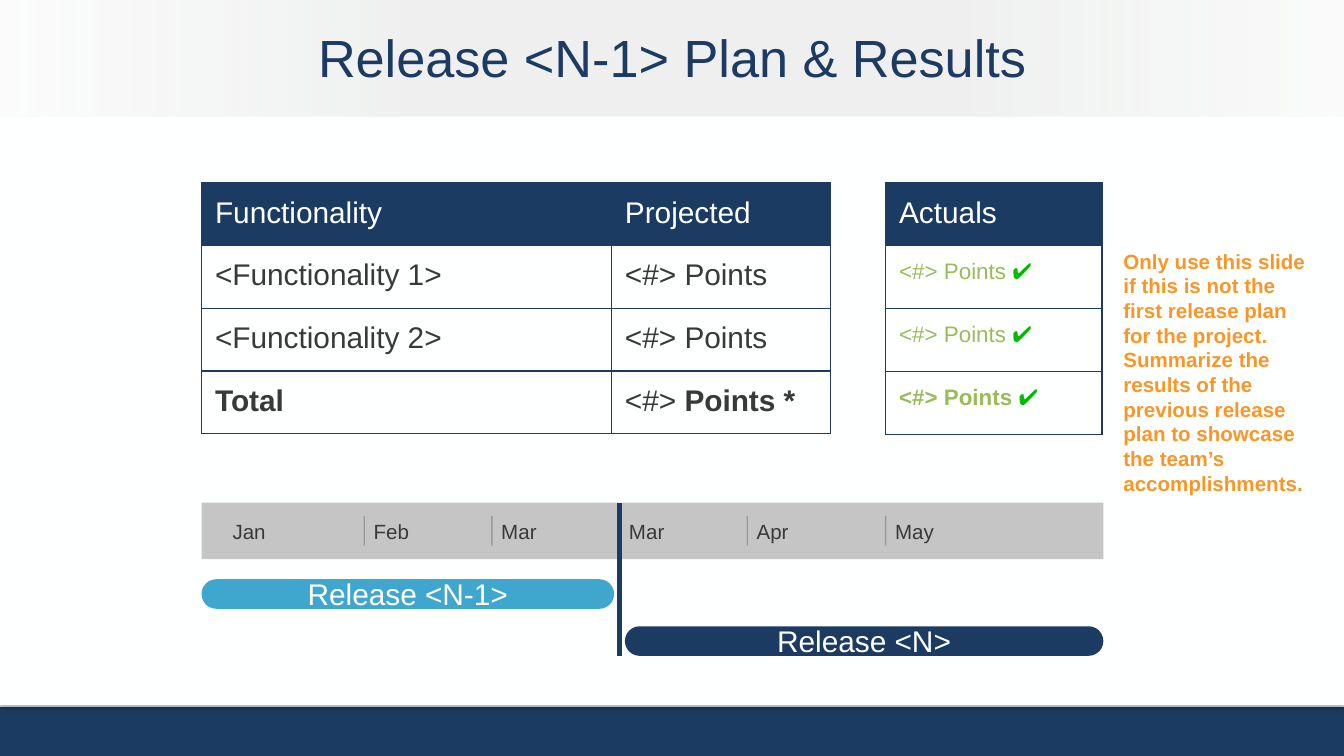
import pptx
import pptx.dml.color
import pptx.enum.shapes
import pptx.enum.text
import pptx.oxml
import pptx.oxml.ns
import pptx.util
from dataclasses import dataclass

Inches = pptx.util.Inches
Pt = pptx.util.Pt
qn = pptx.oxml.ns.qn
SHAPE = pptx.enum.shapes.MSO_SHAPE
ALIGN = pptx.enum.text.PP_ALIGN
ANCHOR = pptx.enum.text.MSO_ANCHOR
NAMESPACE = pptx.oxml.ns.nsdecls("a")


@dataclass(frozen=True)
class Theme:
    font: str = "Arial"
    navy: str = "1C3B63"
    paper: str = "FEFFFF"
    white: str = "FFFFFF"
    gray: str = "C4C5C4"
    text: str = "393939"
    sky: str = "3FA7CE"
    olive: str = "9BBB59"
    check: str = "00BB00"
    orange: str = "FD9526"
    title: float = 28
    body: float = 16
    actual: float = 12
    small: float = 11


def rgb(color):
    return pptx.dml.color.RGBColor.from_string(color)


def color_xml(color, alpha=100):
    return f'<a:srgbClr val="{color}"><a:alpha val="{alpha * 1000}"/></a:srgbClr>'


class SlideBuilder:
    def __init__(self, slide, theme):
        self.slide = slide
        self.theme = theme
        slide.background.fill.solid()
        slide.background.fill.fore_color.rgb = rgb(theme.paper)

    def style(self, font, size, color, bold=False):
        font.name = self.theme.font
        font.size = Pt(size)
        font.bold = bold
        font.color.rgb = rgb(color)

    def block(self, box, color, kind=SHAPE.RECTANGLE):
        shape = self.slide.shapes.add_shape(kind, *map(Inches, box))
        shape.shadow.inherit = False
        shape.fill.solid()
        shape.fill.fore_color.rgb = rgb(color)
        shape.line.fill.background()
        return shape

    def panel(self, box):
        """White page area that casts a soft shadow on the footer."""
        shape = self.block(box, self.theme.paper)
        shape.line.color.rgb = rgb(self.theme.paper)
        shape.line.width = Pt(0.75)
        effects = shape._element.spPr.find(qn("a:effectLst"))
        effects.append(pptx.oxml.parse_xml(
            f'<a:outerShdw {NAMESPACE} blurRad="{Pt(3.1)}" dist="{Pt(1.8)}" '
            f'dir="5400000" rotWithShape="0">{color_xml("000000", 35)}</a:outerShdw>'))

    def fading_band(self, box, color, stops):
        """Band whose opacity changes at each (position, alpha) stop."""
        shape = self.block(box, color)
        stop_xml = "".join(f'<a:gs pos="{position * 1000}">{color_xml(color, alpha)}</a:gs>'
                           for position, alpha in stops)
        solid = shape._element.spPr.find(qn("a:solidFill"))
        solid.getparent().replace(solid, pptx.oxml.parse_xml(
            f'<a:gradFill {NAMESPACE} rotWithShape="1"><a:gsLst>{stop_xml}</a:gsLst>'
            '<a:lin ang="10800000" scaled="0"/></a:gradFill>'))

    def text(self, box, text, size, color, margins=(0, 0), bold=False,
             anchor=ANCHOR.MIDDLE, align=ALIGN.LEFT):
        shape = self.slide.shapes.add_textbox(*map(Inches, box))
        self.fill_text(shape.text_frame, text, size, color, margins, bold, anchor, align)

    def fill_text(self, frame, text, size, color, margins, bold, anchor, align):
        frame.word_wrap = True
        frame.vertical_anchor = anchor
        frame.margin_left = frame.margin_right = Inches(margins[0])
        frame.margin_top = frame.margin_bottom = Inches(margins[1])
        paragraph = frame.paragraphs[0]
        paragraph.text = text
        paragraph.alignment = align
        self.style(paragraph.font, size, color, bold)

    def pill(self, box, text, color):
        shape = self.block(box, color, SHAPE.ROUNDED_RECTANGLE)
        shape.adjustments[0] = 0.5
        self.fill_text(shape.text_frame, text, self.theme.body, self.theme.white,
                       (0.1, 0.05), False, ANCHOR.MIDDLE, ALIGN.CENTER)

    def vertical_line(self, x, top, bottom, color, width, alpha=100):
        line = self.slide.shapes.add_connector(
            pptx.enum.shapes.MSO_CONNECTOR.STRAIGHT,
            Inches(x), Inches(top), Inches(x), Inches(bottom))
        line.line.color.rgb = rgb(color)
        line.line.width = Pt(width)
        properties = line._element.spPr
        if alpha < 100:
            value = properties.find(".//" + qn("a:srgbClr"))
            value.append(pptx.oxml.parse_xml(f'<a:alpha {NAMESPACE} val="{alpha * 1000}"/>'))
        properties.append(pptx.oxml.parse_xml(f"<a:effectLst {NAMESPACE}/>"))

    def table(self, box, widths, heights, rows, size):
        """Each cell is a list of (text, color, bold) runs; the first row is the header."""
        frame = self.slide.shapes.add_table(len(rows), len(widths), *map(Inches, box))
        table = frame.table
        table.first_row = table.horz_banding = False
        for column, width in zip(table.columns, widths):
            column.width = Inches(width)
        for row_index, (row, height) in enumerate(zip(rows, heights)):
            table.rows[row_index].height = Inches(height)
            for column_index, runs in enumerate(row):
                cell = table.cell(row_index, column_index)
                self.cell(cell, runs, self.theme.body if row_index == 0 else size)
                if row_index == 0:
                    cell.fill.solid()
                    cell.fill.fore_color.rgb = rgb(self.theme.navy)
                else:
                    cell.fill.background()
        frame.height = Inches(box[3])

    def cell(self, cell, runs, size):
        cell.margin_left = cell.margin_right = Inches(0.1)
        cell.margin_top = cell.margin_bottom = Inches(0.1)
        for side in "LRTB":
            cell._tc.get_or_add_tcPr().append(pptx.oxml.parse_xml(
                f'<a:ln{side} {NAMESPACE} w="{Pt(0.75)}"><a:solidFill>'
                f'{color_xml(self.theme.navy)}</a:solidFill></a:ln{side}>'))
        paragraph = cell.text_frame.paragraphs[0]
        for text, color, bold in runs:
            run = paragraph.add_run()
            run.text = text
            self.style(run.font, size, color, bold)


def main():
    theme = Theme()
    presentation = pptx.Presentation()
    presentation.slide_width = Inches(10)
    presentation.slide_height = presentation.slide_width * 9 // 16
    slide = presentation.slides.add_slide(presentation.slide_layouts[6])
    builder = SlideBuilder(slide, theme)

    builder.block((0, 5.26, 10, 0.37), theme.navy)
    builder.panel((0, 0, 10, 5.24))
    builder.fading_band((0, 0, 10, 0.87), theme.gray, [(0, 6), (29, 25), (69, 25), (99, 5)])
    builder.text((0, 0.16, 10, 0.52), "Release <N-1> Plan & Results", theme.title,
                 theme.navy, (0.1, 0.05), align=ALIGN.CENTER)

    points = [("<#> Points", theme.text, False)]
    plan = [[[("Functionality", theme.paper, False)], [("Projected", theme.paper, False)]]]
    plan += [[[(f"<Functionality {number}>", theme.text, False)], points] for number in (1, 2)]
    plan.append([[("Total", theme.text, True)],
                 [("<#> ", theme.text, False), ("Points *", theme.text, True)]])
    builder.table((1.5, 1.36, 4.68, 1.87), [3.05, 1.63], [0.4] + [0.27] * 3, plan, theme.body)

    actuals = [[[("Actuals", theme.white, False)]]]
    actuals += [[[("<#> Points ", theme.olive, bold), ("✔", theme.check, True)]]
                for bold in (False, False, True)]
    builder.table((6.59, 1.36, 1.61, 1.87), [1.61], [0.46] + [0.47] * 3, actuals, theme.actual)

    builder.text((8.26, 1.75, 1.61, 2.09),
                 "Only use this slide if this is not the first release plan for the project. "
                 "Summarize the results of the previous release plan to showcase the team’s "
                 "accomplishments.",
                 theme.small, theme.orange, (0.1, 0.1), bold=True, anchor=ANCHOR.TOP)

    release_start = 4.61
    builder.block((1.5, 3.74, 6.71, 0.42), theme.gray)
    builder.text((1.73, 3.86, 0.51, 0.18), "Jan", theme.small, theme.text)
    months = [("Feb", 2.71), ("Mar", 3.66), ("Mar", release_start), ("Apr", 5.56), ("May", 6.59)]
    for month, x in months:
        if x != release_start:
            builder.vertical_line(x, 3.84, 4.06, theme.text, 0.75, alpha=29)
        builder.text((x + 0.07, 3.86, 0.54, 0.18), month, theme.small, theme.text)
    builder.pill((1.5, 4.31, 3.07, 0.22), "Release <N-1>", theme.sky)
    builder.pill((4.65, 4.66, 3.56, 0.22), "Release <N>", theme.navy)
    builder.vertical_line(release_start, 3.74, 4.88, theme.navy, 2.25)

    presentation.save("out.pptx")


if __name__ == "__main__":
    main()
